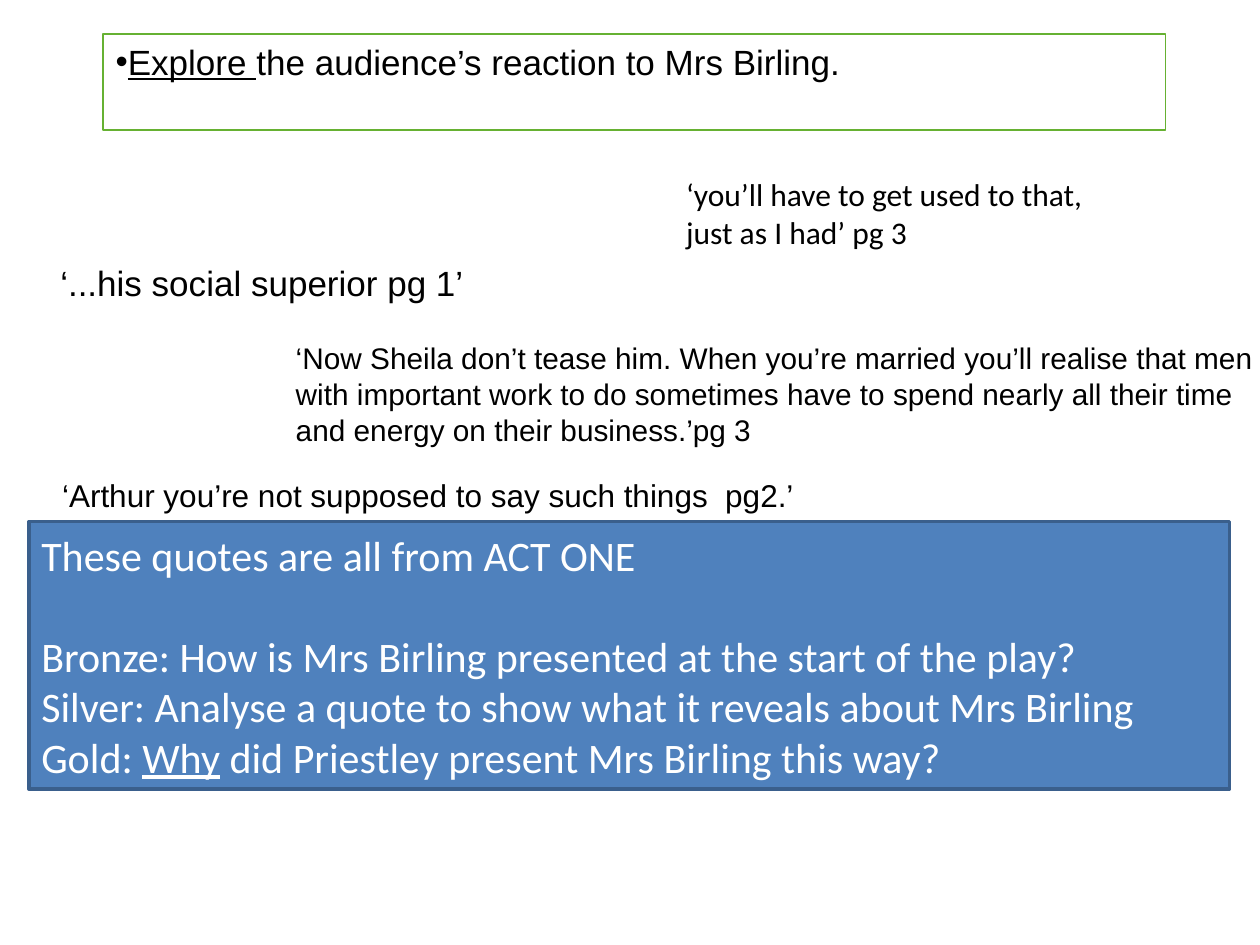
from pptx import Presentation
from pptx.dml.color import RGBColor
from pptx.enum.shapes import MSO_SHAPE
from pptx.enum.text import MSO_ANCHOR, MSO_AUTO_SIZE, PP_ALIGN
from pptx.util import Pt
from lxml import etree

COLORS = {"ink": "000000", "white": "FFFFFF", "green": "66B132",
          "blue": "4F81BD", "navy": "3A5F8C"}


def color(name):
    return RGBColor.from_string(COLORS[name])


class Deck:
    def __init__(self, width, height):
        self.prs = Presentation()
        self.prs.slide_width, self.prs.slide_height = Pt(width), Pt(height)
        self.slide = self.prs.slides.add_slide(self.prs.slide_layouts[6])

    def letter(self, frame, lines, size, font, ink):
        """Fill a frame; each line is a string or a list of (text, underlined)."""
        frame.text = "\n".join(
            line if isinstance(line, str) else "" for line in lines)
        for para, line in zip(frame.paragraphs, lines):
            para.alignment = PP_ALIGN.LEFT
            if not isinstance(line, str):
                for text, under in line:
                    run = para.add_run()
                    run.text = text
                    run.font.underline = under
            for run in para.runs:
                run.font.size = Pt(size)
                run.font.name = font
                run.font.color.rgb = color(ink)

    def panel(self, box, lines, size, font, ink, line, weight, fill=None,
              anchor=MSO_ANCHOR.MIDDLE):
        shape = self.slide.shapes.add_shape(MSO_SHAPE.RECTANGLE, *map(Pt, box))
        shape.shadow.inherit = False
        if fill:
            shape.fill.solid()
            shape.fill.fore_color.rgb = color(fill)
        else:
            shape.fill.background()
        shape.line.color.rgb = color(line)
        shape.line.width = Pt(weight)
        frame = shape.text_frame
        frame.word_wrap = True
        frame.vertical_anchor = anchor
        self.letter(frame, lines, size, font, ink)
        return frame

    def quote(self, box, text, size, font="Arial", inset=0, wrap=True,
              anchor=MSO_ANCHOR.MIDDLE):
        frame = self.slide.shapes.add_textbox(*map(Pt, box)).text_frame
        frame.word_wrap = wrap
        frame.auto_size = MSO_AUTO_SIZE.NONE
        frame.vertical_anchor = anchor
        frame.margin_left = frame.margin_right = Pt(inset)
        frame.margin_top = frame.margin_bottom = Pt(inset / 2)
        self.letter(frame, [text], size, font, "ink")

    def bullet(self, para):
        props = para._p.get_or_add_pPr()
        props.set("marL", "0")
        props.set("indent", "0")
        space = props.nsmap["a"]
        etree.SubElement(props, f"{{{space}}}buFont", typeface="Arial")
        etree.SubElement(props, f"{{{space}}}buChar", char="•")


def main():
    deck = Deck(720, 540)
    task = deck.panel(
        (59, 19.5, 607, 55),
        [[("Explore ", True),
          ("the audience’s reaction to Mrs Birling.", False)]],
        20, "Arial", "ink", "green", 1, anchor=MSO_ANCHOR.TOP)
    task.paragraphs[0].space_before = Pt(4)
    deck.bullet(task.paragraphs[0])

    deck.quote((34.5, 149, 243.5, 24.5), "‘...his social superior pg 1’", 20,
               wrap=False)
    deck.quote((169, 191.5, 551, 67),
               "‘Now Sheila don’t tease him. When you’re married you’ll realise "
               "that men with important work to do sometimes have to spend "
               "nearly all their time and energy on their business.’pg 3", 17)
    deck.quote((35.5, 245, 481.5, 75.5),
               "‘Arthur you’re not supposed to say such things  pg2.’", 18)

    goals = deck.panel(
        (16.5, 298, 686, 153),
        ["These quotes are all from ACT ONE",
         "Bronze: How is Mrs Birling presented at the start of the play?",
         "Silver: Analyse a quote to show what it reveals about Mrs Birling",
         [("Gold: ", False), ("Why", True),
          (" did Priestley present Mrs Birling this way?", False)]],
        24, "Calibri", "white", "navy", 2, fill="blue")
    goals.paragraphs[1].space_before = Pt(29)

    deck.quote((385, 96.5, 263.5, 51),
               "‘you’ll have to get used to that, just as I had’ pg 3", 18,
               "Calibri", inset=7.2, anchor=MSO_ANCHOR.TOP)
    deck.prs.save("out.pptx")


if __name__ == "__main__":
    main()
